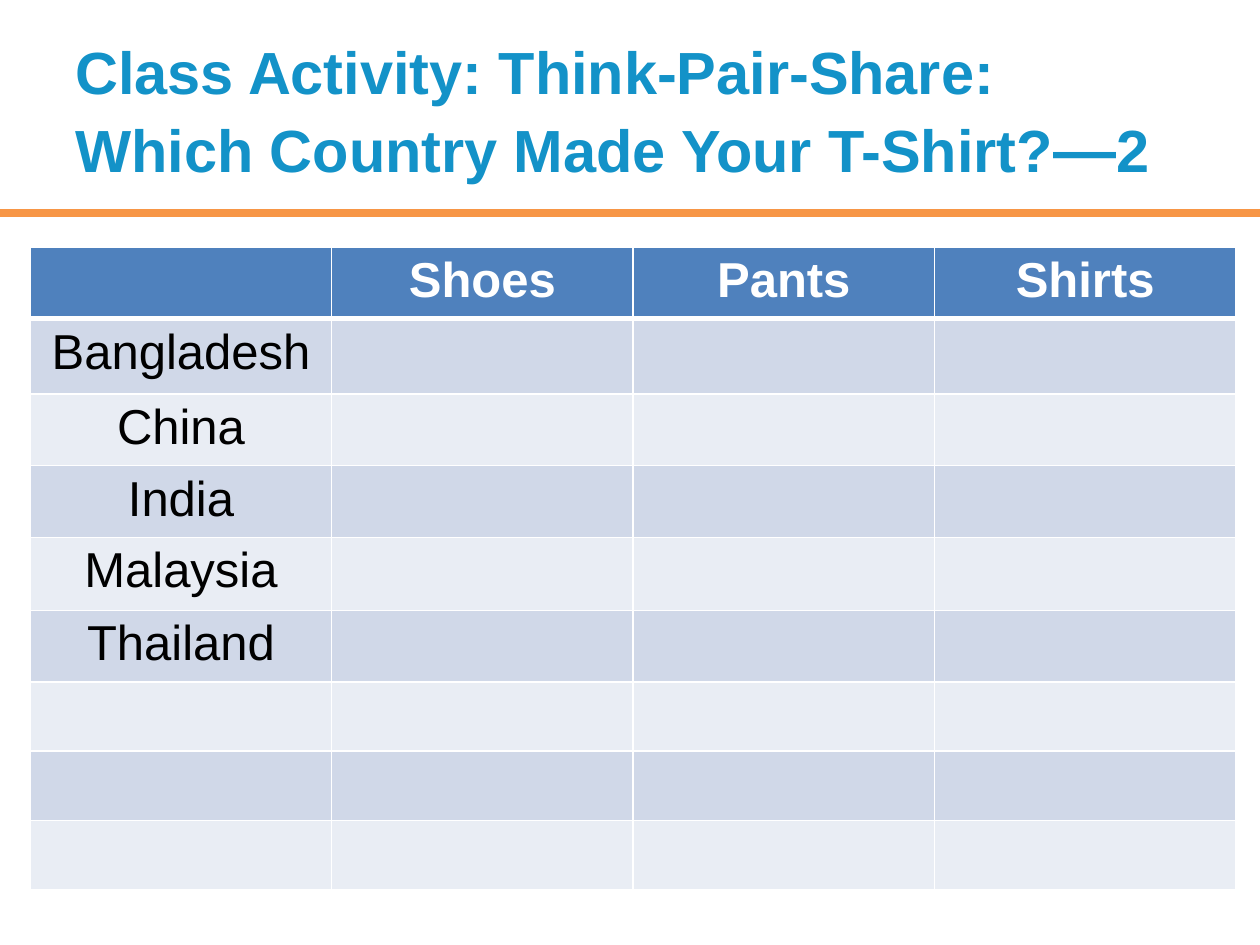
from lxml import etree
from pptx import Presentation
from pptx.dml.color import RGBColor
from pptx.enum.shapes import MSO_CONNECTOR
from pptx.enum.text import MSO_ANCHOR, PP_ALIGN
from pptx.oxml.ns import qn
from pptx.util import Inches, Pt


def rgb(value):
    return RGBColor.from_string(value)


def add_run(p, text, size, color, bold):
    r = p.add_run()
    r.text = text
    r.font.name = "Arial"
    r.font.size = Pt(size)
    r.font.bold = bold
    r.font.color.rgb = rgb(color)


prs = Presentation()
prs.slide_width, prs.slide_height = Inches(10), Inches(7.5)
s = prs.slides.add_slide(prs.slide_layouts[6])

# Orange rule under the title
rule = s.shapes.add_connector(
    MSO_CONNECTOR.STRAIGHT, Inches(0), Inches(1.69), Inches(10), Inches(1.69))
rule.line.color.rgb = rgb("F79646")
rule.line.width = Pt(4.5)
etree.SubElement(rule._element.spPr, qn("a:effectLst"))

# Title
title = s.shapes.add_textbox(Inches(0.5), Inches(0), Inches(9), Inches(1.67))
tf = title.text_frame
tf.word_wrap = True
tf.vertical_anchor = MSO_ANCHOR.MIDDLE
tf.margin_top = Inches(0.11)
p = tf.paragraphs[0]
p.line_spacing = 1.04
for text, size in [
    ("Class Activity: Think-Pair-Share: Which Country Made Your T-Shirt?", 34),
    ("—", 36),
    ("2", 34),
]:
    add_run(p, text, size, "1392C8", True)

# Table: products across, countries down, spare rows at the end
products = ["", "Shoes", "Pants", "Shirts"]
countries = ["Bangladesh", "China", "India", "Malaysia", "Thailand", "", "", ""]
rows = [products] + [[country, "", "", ""] for country in countries]
heights = [0.53, 0.6, 0.53, 0.57, 0.58] + [0.55] * 4

table = s.shapes.add_table(
    len(rows), len(products), Inches(0.24), Inches(1.96),
    Inches(9.57), Inches(sum(heights))).table
for column in table.columns:
    column.width = Inches(9.57 / len(products))

for i, row in enumerate(rows):
    table.rows[i].height = Inches(heights[i])
    header = i == 0
    fill = "4F81BD" if header else ("E9EDF4", "D0D8E8")[i % 2]
    for j, text in enumerate(row):
        cell = table.cell(i, j)
        p = cell.text_frame.paragraphs[0]
        p.alignment = PP_ALIGN.CENTER
        if text:
            add_run(p, text, 28, "FFFFFF" if header else "000000", header)

        # White borders, thicker below the header; they precede the fill
        tc_pr = cell._tc.get_or_add_tcPr()
        thick = {"lnB": header, "lnT": i == 1}
        for side in ("lnL", "lnR", "lnT", "lnB"):
            width = Pt(3 if thick.get(side) else 1)
            ln = etree.SubElement(tc_pr, qn("a:" + side), w=str(width))
            solid = etree.SubElement(ln, qn("a:solidFill"))
            etree.SubElement(solid, qn("a:srgbClr"), val="FFFFFF")
        cell.fill.solid()
        cell.fill.fore_color.rgb = rgb(fill)

prs.save("out.pptx")
